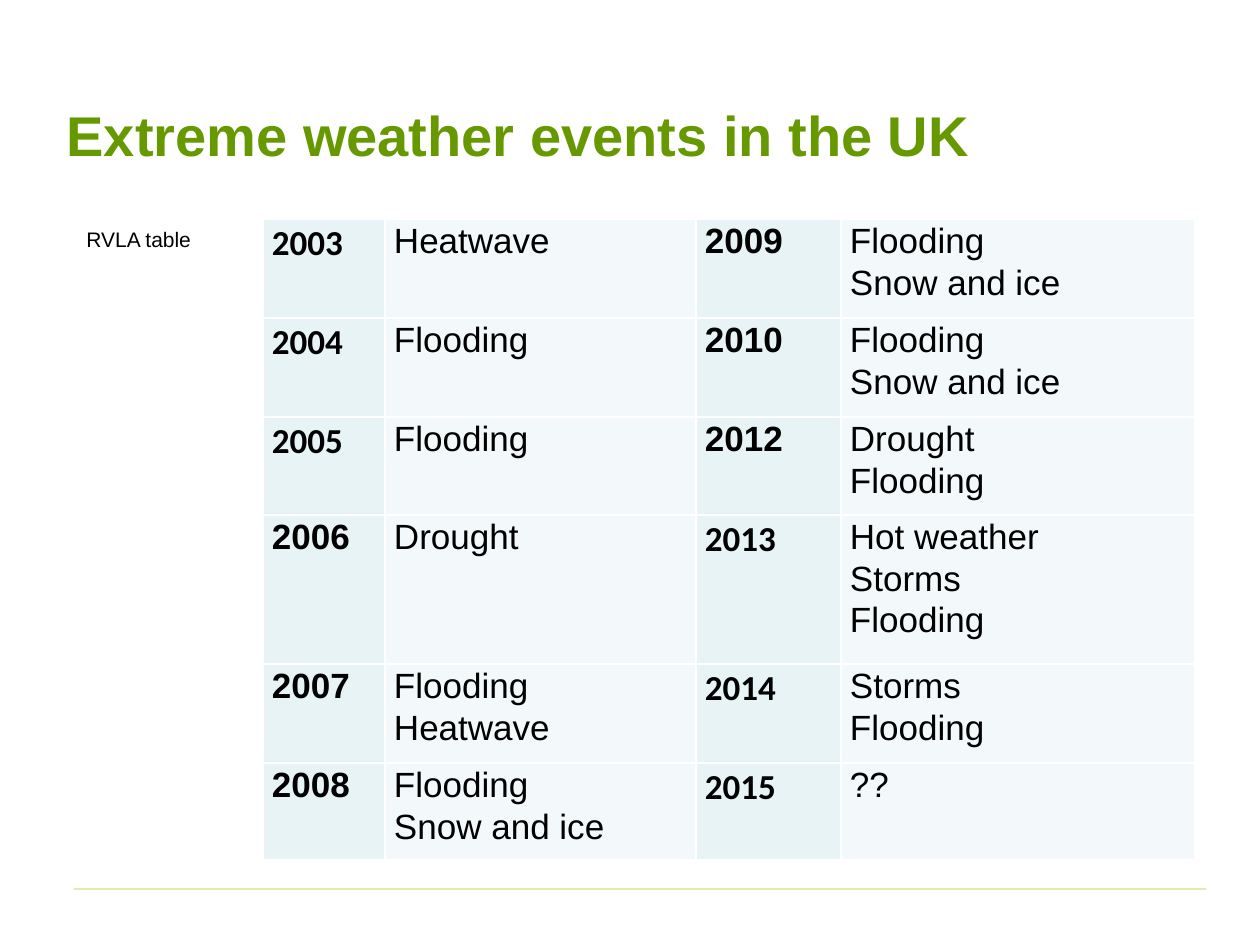
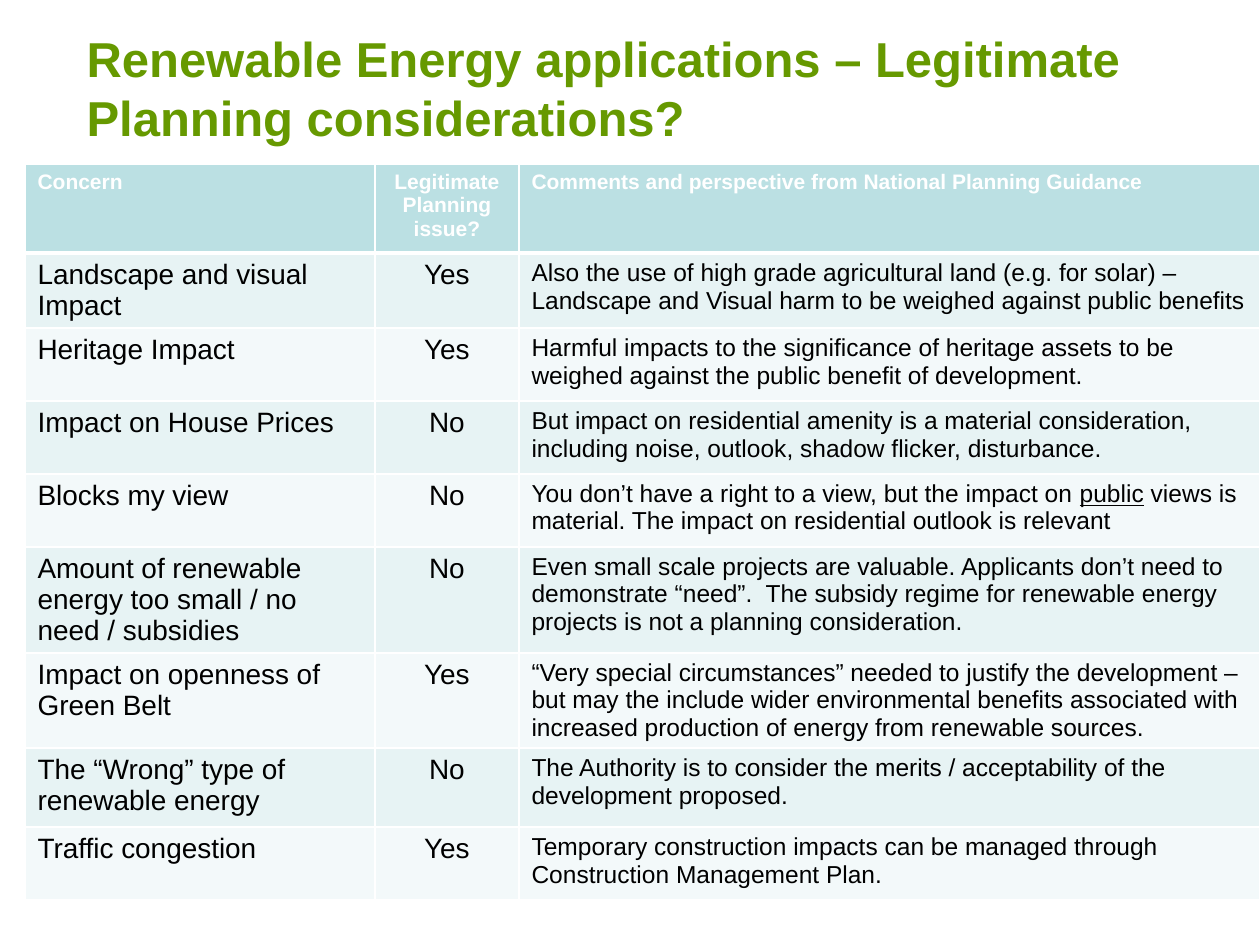
import pptx
import pptx.dml.color
import pptx.enum.shapes
import pptx.enum.text
import pptx.oxml
import pptx.oxml.ns
import pptx.util

COLORS = {
    "title": "669900",
    "rule": "99CC00",
    "text": "000000",
    "white": "FFFFFF",
    "header": "BBE0E3",
    "band": "E7F3F4",
    "pale": "F3F9FA",
}
PIXELS_PER_INCH = 126
ALIGN = pptx.enum.text.PP_ALIGN
ANCHOR = pptx.enum.text.MSO_ANCHOR
NAMESPACE = pptx.oxml.ns.nsdecls("a")

CALIBRI_YEARS = {"2003", "2004", "2005", "2013", "2014", "2015"}
EVENTS = [
    ("2003", "Heatwave", "2009", "Flooding\nSnow and ice"),
    ("2004", "Flooding", "2010", "Flooding\nSnow and ice"),
    ("2005", "Flooding", "2012", "Drought\nFlooding"),
    ("2006", "Drought", "2013", "Hot weather\nStorms\nFlooding"),
    ("2007", "Flooding\nHeatwave", "2014", "Storms\nFlooding"),
    ("2008", "Flooding\nSnow and ice", "2015", "??"),
]
CONCERNS = [
    ("Concern", "Legitimate Planning issue?",
     "Comments and perspective from National Planning Guidance"),
    ("Landscape and visual Impact", "Yes",
     "Also the use of high grade agricultural land (e.g. for solar) – Landscape and "
     "Visual harm to be weighed against public benefits"),
    ("Heritage Impact", "Yes",
     "Harmful impacts to the significance of heritage assets to be weighed against "
     "the public benefit of development."),
    ("Impact on House Prices", "No",
     "But impact on residential amenity is a material consideration, including noise, "
     "outlook, shadow flicker, disturbance."),
    ("Blocks my view", "No",
     "You don’t have a right to a view, but the impact on public views is material. "
     "The impact on residential outlook is relevant"),
    ("Amount of renewable energy too small / no need / subsidies", "No",
     "Even small scale projects are valuable. Applicants don’t need to demonstrate "
     "“need”.  The subsidy regime for renewable energy projects is not a planning "
     "consideration."),
    ("Impact on openness of Green Belt", "Yes",
     "“Very special circumstances” needed to justify the development – but may the "
     "include wider environmental benefits associated with increased production of "
     "energy from renewable sources."),
    ("The “Wrong” type of renewable energy", "No",
     "The Authority is to consider the merits / acceptability of the development "
     "proposed."),
    ("Traffic congestion", "Yes",
     "Temporary construction impacts can be managed through Construction Management "
     "Plan."),
]


def px(length):
    return pptx.util.Emu(round(length * 914400 / PIXELS_PER_INCH))


def rgb(name):
    return pptx.dml.color.RGBColor.from_string(COLORS[name])


def write(frame, text, size, color="text", bold=False, font="Arial",
          align=ALIGN.LEFT, spacing=None, before=0, underlined=None):
    frame.word_wrap = True
    for index, line in enumerate(text.split("\n")):
        para = frame.add_paragraph() if index else frame.paragraphs[0]
        para.alignment = align
        para.line_spacing = spacing
        para.space_before = pptx.util.Pt(before)
        parts = line.partition(underlined) if underlined else (line,)
        for part in filter(None, parts):
            span = para.add_run()
            span.text = part
            span.font.name = font
            span.font.size = pptx.util.Pt(size)
            span.font.bold = bold
            span.font.color.rgb = rgb(color)
            if part == underlined:
                span.font.underline = True


class Page:
    def __init__(self, deck):
        self.deck = deck
        self.slide = None

    def start(self, title, size, left, top, width, height):
        self.slide = self.deck.slides.add_slide(self.deck.slide_layouts[5])
        box = self.slide.shapes.title
        box.left, box.top, box.width, box.height = map(px, (left, top, width, height))
        box.text_frame.auto_size = pptx.enum.text.MSO_AUTO_SIZE.NONE
        box.text_frame.vertical_anchor = ANCHOR.MIDDLE
        write(box.text_frame, title, size, color="title", bold=True)

    def master_rule(self, left, right, y):
        rule = self.slide.shapes.add_connector(
            pptx.enum.shapes.MSO_CONNECTOR.STRAIGHT, px(left), px(y), px(right), px(y))
        rule.line.color.rgb = rgb("rule")
        rule.line.width = pptx.util.Pt(0.75)
        color = rule.element.find(".//" + pptx.oxml.ns.qn("a:srgbClr"))
        color.append(pptx.oxml.parse_xml(f'<a:alpha {NAMESPACE} val="50000"/>'))
        rule.element.spPr.append(pptx.oxml.parse_xml(f"<a:effectLst {NAMESPACE}/>"))
        rule.element.nvCxnSpPr.cNvPr.id = 20
        self.deck.slide_master.shapes.element.append(rule.element)

    def label(self, text, size, left, top, width, height, **style):
        box = self.slide.shapes.add_textbox(*map(px, (left, top, width, height)))
        write(box.text_frame, text, size, **style)

    def table(self, rows, left, top, widths, heights, cell_style, header=False):
        table = self.slide.shapes.add_table(
            len(rows), len(widths), px(left), px(top),
            px(sum(widths)), px(sum(heights))).table
        table.first_row = header
        table.horz_banding = False
        for column, width in zip(table.columns, widths):
            column.width = px(width)
        for row, height in zip(table.rows, heights):
            row.height = px(height)
        for r, texts in enumerate(rows):
            for c, text in enumerate(texts):
                cell = table.cell(r, c)
                fill, margins, style = cell_style(r, c, text)
                if margins:
                    cell.margin_left = cell.margin_right = px(margins[0])
                    cell.margin_top = cell.margin_bottom = px(margins[1])
                thick = {0: "lnB", 1: "lnT"}.get(r) if header else None
                self.borders(cell, thick)
                cell.fill.solid()
                cell.fill.fore_color.rgb = rgb(fill)
                write(cell.text_frame, text, **style)

    def borders(self, cell, thick):
        properties = cell._tc.get_or_add_tcPr()
        for edge in ("lnL", "lnR", "lnT", "lnB"):
            width = pptx.util.Pt(3 if edge == thick else 1)
            properties.append(pptx.oxml.parse_xml(
                f'<a:{edge} {NAMESPACE} w="{width}"><a:solidFill>'
                f'<a:srgbClr val="{COLORS["white"]}"/></a:solidFill></a:{edge}>'))


def event_style(row, column, text):
    is_year = column % 2 == 0
    style = dict(size=20, bold=is_year, spacing=1.07,
                 font="Calibri" if text in CALIBRI_YEARS else "Arial")
    return "band" if is_year else "pale", (9, 0), style


def concern_style(row, column, text):
    style = dict(align=ALIGN.CENTER if column == 1 else ALIGN.LEFT)
    if row == 0:
        return "header", None, dict(style, size=12, color="white", bold=True)
    style["size"] = 14 if column == 2 else 16
    if "public views" in text:
        style["underlined"] = "public"
    return "band" if row % 2 else "pale", None, style


def main():
    deck = pptx.Presentation()
    deck.slide_width, deck.slide_height = px(1260), px(945)
    page = Page(deck)

    page.start("Extreme weather events in the UK", 32, 54, 55, 1152, 158)
    page.master_rule(74, 1206, 889)
    page.table(EVENTS, 263, 219, [122, 311, 145, 354],
               [99, 99, 98, 149, 99, 97], event_style)
    page.label("RVLA table", 12, 74, 220, 1134, 600, before=2.4)

    page.start("Renewable Energy applications – Legitimate Planning considerations?",
               28, 74, 0, 1134, 175)
    page.table(CONCERNS, 25, 164, [350, 144, 741],
               [89, 75, 73, 73, 73, 106, 95, 79, 73], concern_style, header=True)

    deck.save("out.pptx")


if __name__ == "__main__":
    main()
